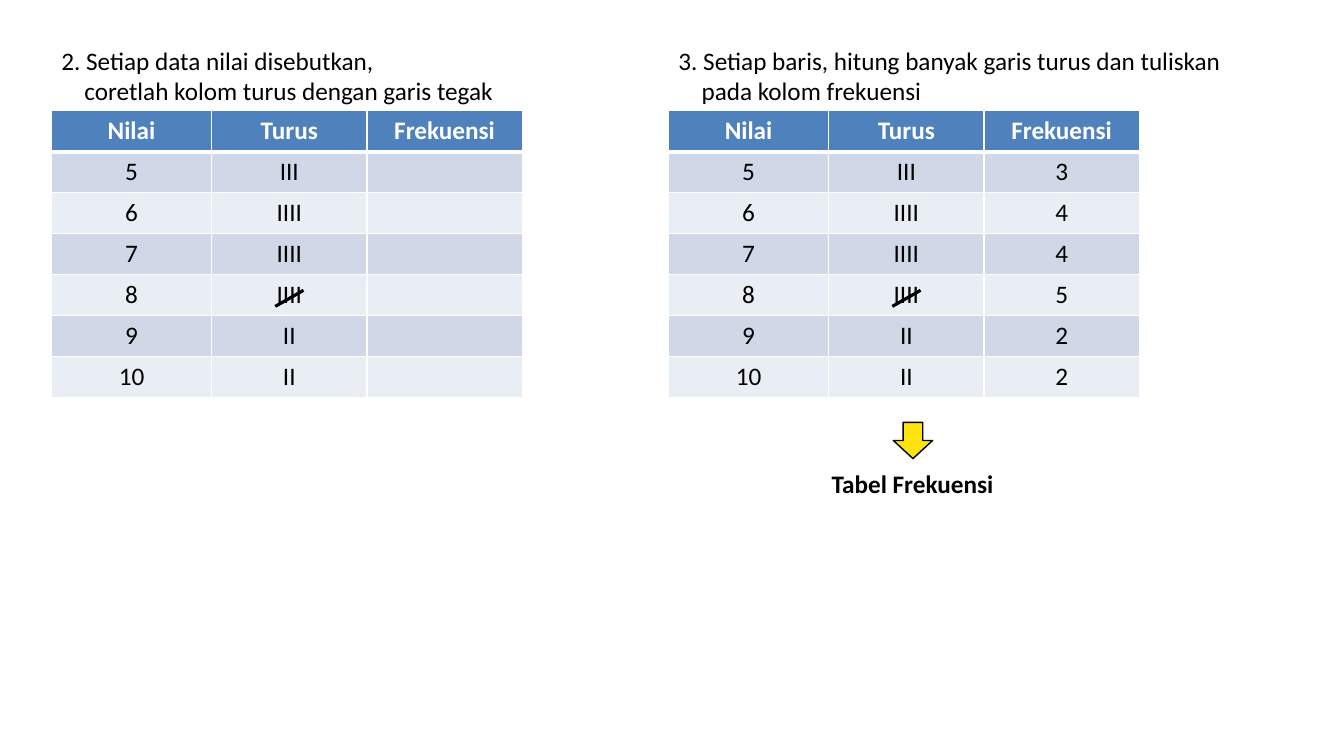
"""Build a slide showing how tally marks become a frequency table."""
from dataclasses import dataclass

from lxml.etree import SubElement
from pptx import Presentation
from pptx.dml.color import RGBColor
from pptx.enum.shapes import MSO_CONNECTOR, MSO_SHAPE
from pptx.enum.text import MSO_ANCHOR, MSO_AUTO_SIZE, PP_ALIGN
from pptx.oxml.ns import qn
from pptx.util import Inches, Pt


@dataclass(frozen=True)
class Theme:
    font: str = "Calibri"
    size: Pt = Pt(18)
    black: RGBColor = RGBColor(0x00, 0x00, 0x00)
    white: RGBColor = RGBColor(0xFF, 0xFF, 0xFF)
    header: RGBColor = RGBColor(0x4F, 0x81, 0xBD)
    odd_row: RGBColor = RGBColor(0xD0, 0xD8, 0xE8)
    even_row: RGBColor = RGBColor(0xE9, 0xED, 0xF4)
    arrow: RGBColor = RGBColor(0xFF, 0xE3, 0x11)


theme = Theme()


def style(p, color=theme.black, bold=False):
    p.font.name = theme.font
    p.font.size = theme.size
    p.font.color.rgb = color
    p.font.bold = bold


def add_border(cell, side, width):
    ln = SubElement(cell._tc.get_or_add_tcPr(), qn(f"a:ln{side}"), w=str(Pt(width)))
    fill = SubElement(ln, qn("a:solidFill"))
    SubElement(fill, qn("a:srgbClr"), val=str(theme.white))


headings = ["Nilai", "Turus", "Frekuensi"]
tallies = [("5", "III", "3"), ("6", "IIII", "4"), ("7", "IIII", "4"),
           ("8", "IIII", "5"), ("9", "II", "2"), ("10", "II", "2")]
col_widths = [1.59, 1.54, 1.54]
row_height = 0.406
steps = [
    (0.51, 4.6, False, ["2. Setiap data nilai disebutkan,",
                        "coretlah kolom turus dengan garis tegak"]),
    (6.63, 5.91, True, ["3. Setiap baris, hitung banyak garis turus dan tuliskan",
                        "pada kolom frekuensi"]),
]

prs = Presentation()
prs.slide_width = Inches(13.33)
prs.slide_height = Inches(7.5)
s = prs.slides.add_slide(prs.slide_layouts[6])

for left, width, counted, lines in steps:
    tf = s.shapes.add_textbox(Inches(left), Inches(0.4), Inches(width), Inches(0.71)).text_frame
    tf.word_wrap = True
    tf.auto_size = MSO_AUTO_SIZE.SHAPE_TO_FIT_TEXT
    tf.text = "\n".join(lines)
    tf.paragraphs[1]._p.get_or_add_pPr().set("marL", str(Inches(0.23)))
    for p in tf.paragraphs:
        style(p)

    rows = [headings] + [(value, tally, count if counted else "") for value, tally, count in tallies]
    table = s.shapes.add_table(len(rows), len(headings), Inches(left), Inches(1.1),
                               Inches(sum(col_widths)), Inches(row_height * len(rows))).table
    for column, col_width in zip(table.columns, col_widths):
        column.width = Inches(col_width)
    for i, row in enumerate(rows):
        table.rows[i].height = Inches(row_height)
        for j, text in enumerate(row):
            cell = table.cell(i, j)
            for side in "LRTB":
                under_header = (i, side) in [(0, "B"), (1, "T")]
                add_border(cell, side, 3 if under_header else 1)
            cell.fill.solid()
            cell.fill.fore_color.rgb = (theme.header if i == 0 else
                                        theme.odd_row if i % 2 else theme.even_row)
            cell.vertical_anchor = MSO_ANCHOR.MIDDLE
            cell.text_frame.text = text
            p = cell.text_frame.paragraphs[0]
            p.alignment = PP_ALIGN.CENTER
            style(p, theme.white if i == 0 else theme.black, i == 0)

    strike = s.shapes.add_connector(MSO_CONNECTOR.STRAIGHT, Inches(left + 2.22), Inches(3.04),
                                    Inches(left + 2.5), Inches(2.88))
    strike.line.color.rgb = theme.black
    strike.line.width = Pt(2.25)
    SubElement(strike._element.spPr, qn("a:effectLst"))

arrow = s.shapes.add_shape(MSO_SHAPE.DOWN_ARROW, Inches(8.86), Inches(4.19),
                           Inches(0.39), Inches(0.36))
arrow.shadow.inherit = False
arrow.fill.solid()
arrow.fill.fore_color.rgb = theme.arrow
arrow.line.color.rgb = theme.black
arrow.line.width = Pt(1)

tf = s.shapes.add_textbox(Inches(8.15), Inches(4.6), Inches(1.82), Inches(0.4)).text_frame
tf.word_wrap = False
tf.auto_size = MSO_AUTO_SIZE.SHAPE_TO_FIT_TEXT
tf.text = "Tabel Frekuensi"
style(tf.paragraphs[0], bold=True)

prs.save("out.pptx")
